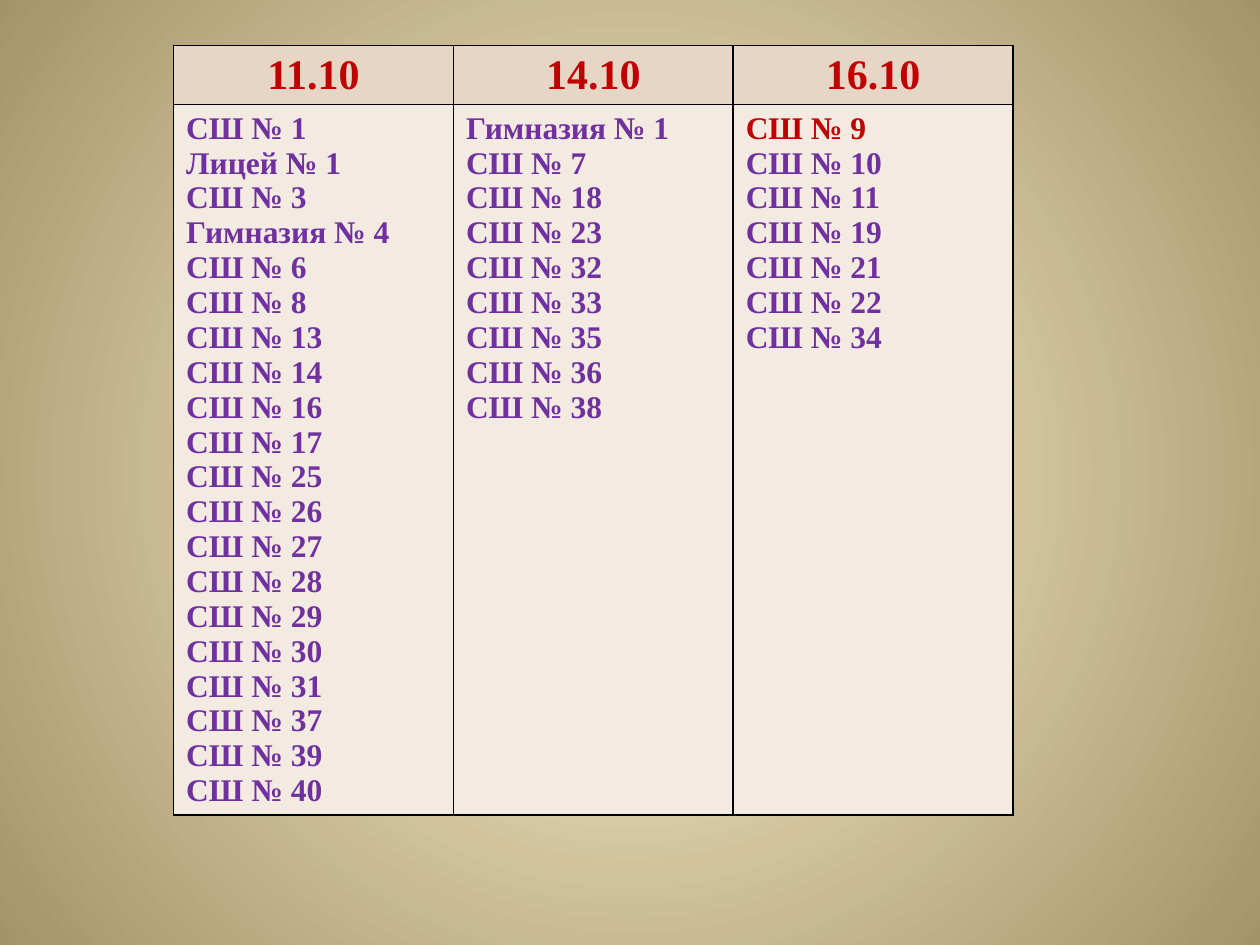
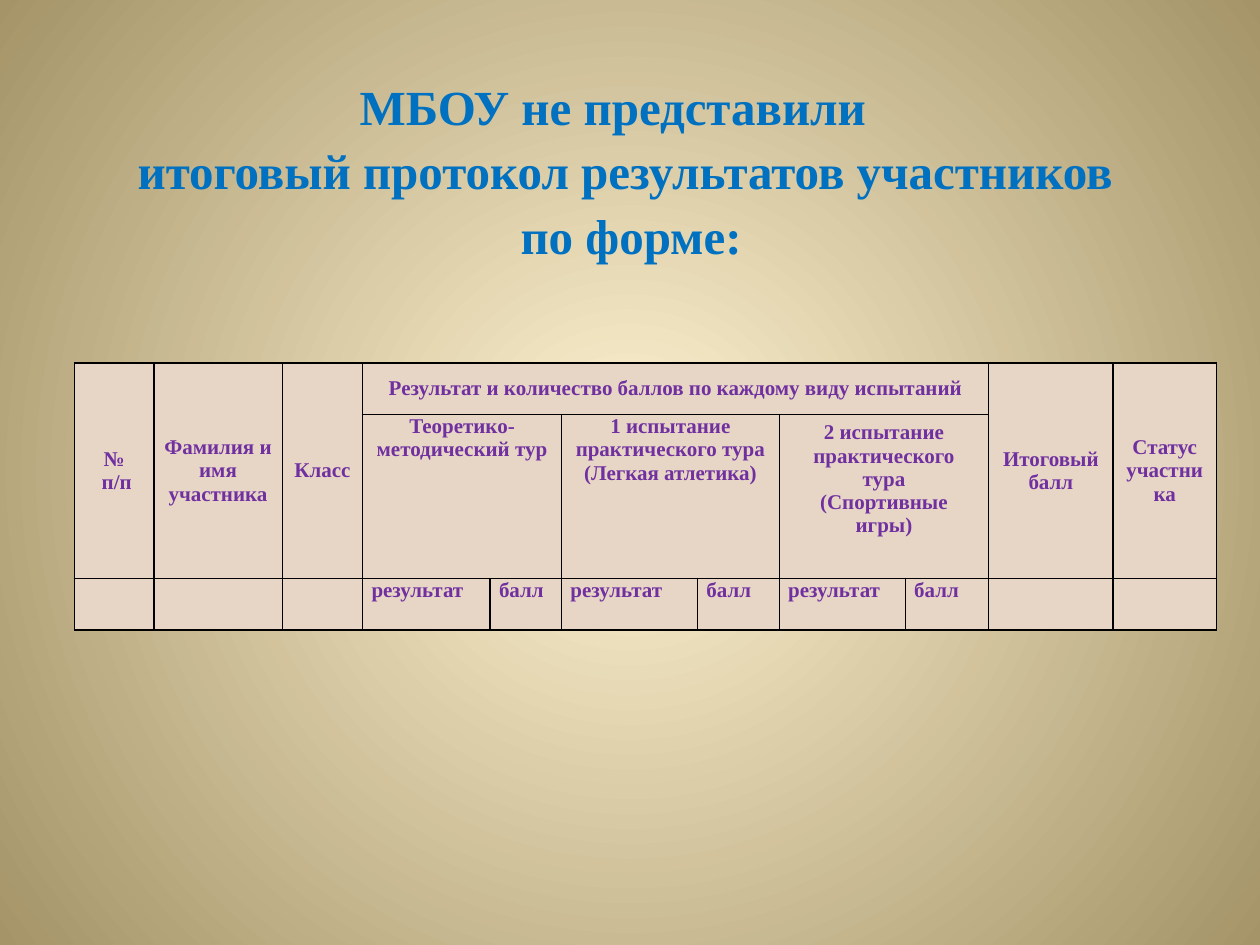
from dataclasses import dataclass

from lxml.etree import SubElement
from pptx import Presentation
from pptx.dml.color import RGBColor
from pptx.enum.text import MSO_ANCHOR, MSO_AUTO_SIZE, PP_ALIGN
from pptx.oxml import parse_xml
from pptx.oxml.ns import nsdecls, qn
from pptx.slide import Slide
from pptx.table import Table, _Cell
from pptx.text.text import TextFrame
from pptx.util import Cm, Pt

FONT = "Times New Roman"
COLORS = {
    "glow": "FFF3D2",
    "edge": "A49468",
    "header": "E7D6C5",
    "body": "F3EAE2",
    "red": "C00000",
    "purple": "7030A0",
    "blue": "0070C0",
    "border": "000000",
}


@dataclass(frozen=True)
class Style:
    size: int
    color: str
    align: PP_ALIGN = PP_ALIGN.LEFT
    spacing: float = 1.0


@dataclass(frozen=True)
class Entry:
    """Text of a table cell, with its place and span."""
    row: int
    col: int
    lines: tuple[str, ...]
    style: Style
    rows: int = 1
    cols: int = 1
    anchor: MSO_ANCHOR = MSO_ANCHOR.TOP
    tight: bool = True


TITLE = Style(28, "blue", PP_ALIGN.CENTER, 1.09)
DATE = Style(24, "red", PP_ALIGN.CENTER)
SCHOOL = Style(18, "purple")
HEADING = Style(12, "purple", PP_ALIGN.CENTER)
LABEL = Style(12, "purple")


# Shared drawing
def add_slide(prs: Presentation) -> Slide:
    s = prs.slides.add_slide(prs.slide_layouts[6])
    bg = parse_xml(
        f'<p:bg {nsdecls("p", "a")}><p:bgPr><a:gradFill rotWithShape="1"><a:gsLst>'
        f'<a:gs pos="0"><a:srgbClr val="{COLORS["glow"]}"/></a:gs>'
        f'<a:gs pos="100000"><a:srgbClr val="{COLORS["edge"]}"/></a:gs></a:gsLst>'
        '<a:path path="circle"><a:fillToRect l="50000" t="50000" r="50000" b="50000"/>'
        '</a:path></a:gradFill><a:effectLst/></p:bgPr></p:bg>')
    s.element.cSld.insert(0, bg)
    return s


def write(tf: TextFrame, lines: tuple[str, ...], style: Style) -> None:
    tf.word_wrap = True
    for i, line in enumerate(lines):
        p = tf.paragraphs[0] if i == 0 else tf.add_paragraph()
        p.text = line
        p.alignment = style.align
        p.line_spacing = style.spacing
        p.font.name = FONT
        p.font.size = Pt(style.size)
        p.font.bold = True
        p.font.color.rgb = RGBColor.from_string(COLORS[style.color])


def paint(cell: _Cell, color: str) -> None:
    cell.fill.solid()
    cell.fill.fore_color.rgb = RGBColor.from_string(COLORS[color])
    tcPr = cell._tc.get_or_add_tcPr()
    for i, side in enumerate(("lnL", "lnR", "lnT", "lnB")):
        ln = tcPr.makeelement(qn(f"a:{side}"), {"w": str(Pt(1))})
        fill = SubElement(ln, qn("a:solidFill"))
        SubElement(fill, qn("a:srgbClr"), val=COLORS["border"])
        tcPr.insert(i, ln)


def add_table(s: Slide, left: float, top: float, widths: list[float],
              heights: list[float], fills: list[str], entries: list[Entry]) -> Table:
    table = s.shapes.add_table(len(heights), len(widths), Cm(left), Cm(top),
                               Cm(sum(widths)), Cm(sum(heights))).table
    table.first_row = table.horz_banding = False
    for column, width in zip(table.columns, widths):
        column.width = Cm(width)
    for row, height, fill in zip(table.rows, heights, fills):
        row.height = Cm(height)
        for cell in row.cells:
            paint(cell, fill)
    for e in entries:
        cell = table.cell(e.row, e.col)
        if e.rows * e.cols > 1:
            cell.merge(table.cell(e.row + e.rows - 1, e.col + e.cols - 1))
        cell.vertical_anchor = e.anchor
        if e.tight:
            cell.margin_left = cell.margin_right = Cm(0.18)
            cell.margin_top = cell.margin_bottom = 0
        write(cell.text_frame, e.lines, e.style)
    return table


# Schools by date
def schools(*numbers: int) -> tuple[str, ...]:
    return tuple(f"СШ № {n}" for n in numbers)


def schedule_slide(prs: Presentation) -> None:
    schedule = {
        "11.10": ("СШ № 1", "Лицей № 1", "СШ № 3", "Гимназия № 4",
                  *schools(6, 8, 13, 14, 16, 17, *range(25, 32), 37, 39, 40)),
        "14.10": ("Гимназия № 1", *schools(7, 18, 23, 32, 33, 35, 36, 38)),
        "16.10": schools(9, 10, 11, 19, 21, 22, 34),
    }
    entries = []
    for col, (date, names) in enumerate(schedule.items()):
        entries.append(Entry(0, col, (date,), DATE, tight=False))
        entries.append(Entry(1, col, names, SCHOOL, tight=False))
    table = add_table(add_slide(prs), 3.5, 0.92, [5.64] * 3, [1.19, 14.32],
                      ["header", "body"], entries)
    # School № 9 stands out
    first = table.cell(1, 2).text_frame.paragraphs[0]
    first.font.color.rgb = RGBColor.from_string(COLORS["red"])


# Results protocol form
def protocol_slide(prs: Presentation) -> None:
    s = add_slide(prs)
    tf = s.shapes.add_textbox(Cm(1.5), Cm(1.32), Cm(22.2), Cm(4.62)).text_frame
    tf.auto_size = MSO_AUTO_SIZE.SHAPE_TO_FIT_TEXT
    write(tf, ("МБОУ не представили  ",
               "итоговый протокол результатов участников",
               " по форме:"), TITLE)

    middle = MSO_ANCHOR.MIDDLE
    tall_headings = {
        0: ("№", " п/п"),
        1: ("Фамилия и имя участника",),
        2: ("Класс",),
        9: ("Итоговый балл",),
        10: ("Статус участника",),
    }
    rounds = [
        ("Теоретико-методический тур",),
        ("1 испытание", "практического тура (Легкая атлетика)"),
        ("2 испытание практического тура", "(Спортивные игры)"),
    ]
    entries = [Entry(0, col, lines, HEADING, rows=2, anchor=middle)
               for col, lines in tall_headings.items()]
    entries.append(Entry(0, 3, ("Результат и количество баллов по каждому виду испытаний",),
                         HEADING, cols=6, anchor=middle))
    for i, lines in enumerate(rounds):
        col = 3 + 2 * i
        entries.append(Entry(1, col, lines, HEADING, cols=2, tight=i < 2))
        entries.append(Entry(2, col, ("результат",), LABEL))
        entries.append(Entry(2, col + 1, ("балл",), LABEL))
    widths = [1.6, 2.59, 1.62, 2.57, 1.44, 2.74, 1.65, 2.54, 1.68, 2.51, 2.08]
    add_table(s, 1.5, 7.32, widths, [1.04, 3.3, 1.04], ["header"] * 3, entries)


def main() -> None:
    prs = Presentation()
    prs.slide_width, prs.slide_height = Cm(25.4), Cm(19.05)
    schedule_slide(prs)
    protocol_slide(prs)
    prs.save("out.pptx")


if __name__ == "__main__":
    main()
